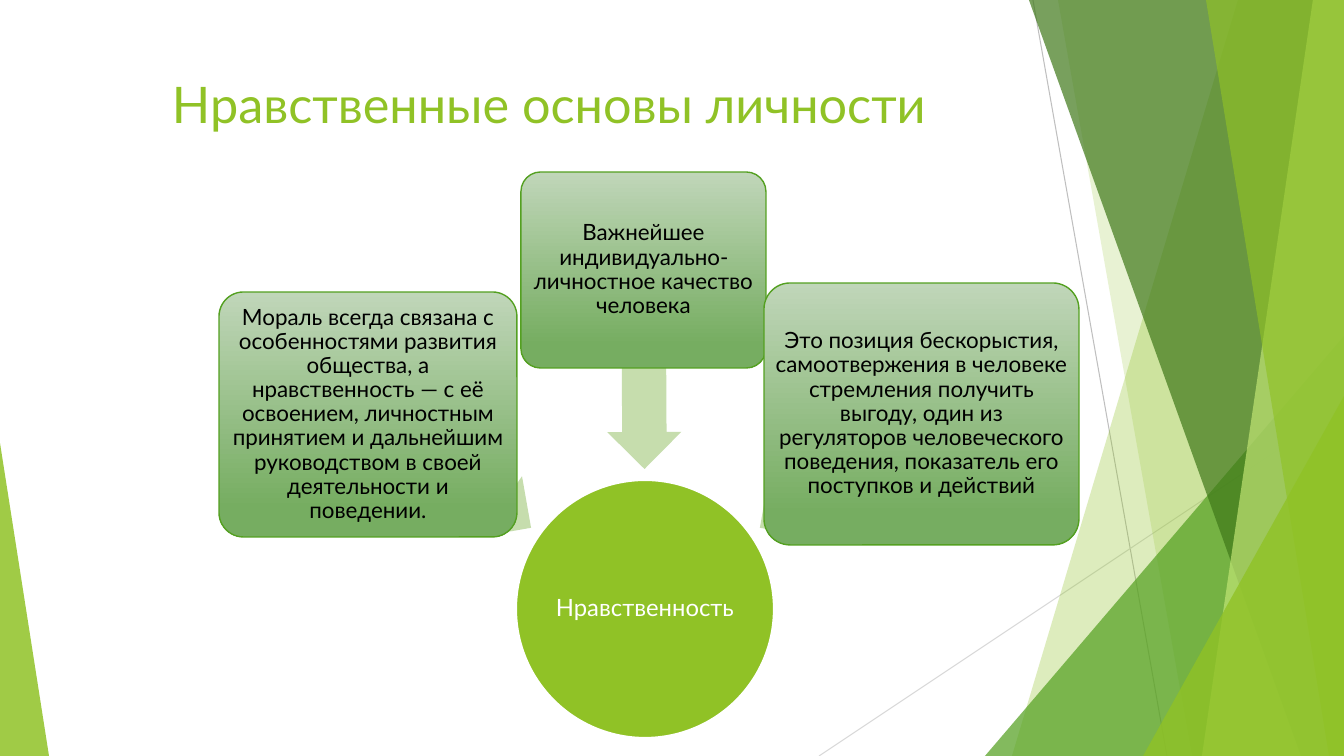
from pptx import Presentation
from pptx.dml.color import RGBColor
from pptx.enum.shapes import MSO_CONNECTOR, MSO_SHAPE
from pptx.enum.text import MSO_ANCHOR, PP_ALIGN
from pptx.oxml.ns import qn
from pptx.util import Pt
from lxml import etree

TRIANGLE = MSO_SHAPE.ISOSCELES_TRIANGLE
ROUNDED = MSO_SHAPE.ROUNDED_RECTANGLE
ARROW = MSO_SHAPE.LEFT_ARROW
OVAL = MSO_SHAPE.OVAL
STRAIGHT = MSO_CONNECTOR.STRAIGHT
TOP, MIDDLE = MSO_ANCHOR.TOP, MSO_ANCHOR.MIDDLE
CENTER = PP_ALIGN.CENTER

WIDTH, HEIGHT = 1344, 756
PX = 12192000 / WIDTH  # EMU in one px
GREEN = "90C226"


def paint(fill, color, opacity=100):
    fill.solid()
    fill.fore_color.rgb = RGBColor.from_string(color)
    if opacity < 100:
        tint = fill._xPr.find(qn("a:solidFill"))[0]
        etree.SubElement(tint, qn("a:alpha"), val=str(opacity * 1000))


def write(shape, text, size, color, anchor=MIDDLE, inset=3, spacing=0.9):
    frame = shape.text_frame
    frame.word_wrap = True
    frame.vertical_anchor = anchor
    frame.margin_left = frame.margin_right = round(inset * PX)
    frame.margin_top = frame.margin_bottom = round(inset * PX)
    para = frame.paragraphs[0]
    para.alignment = CENTER
    para.line_spacing = spacing
    span = para.add_run()
    span.text = text
    span.font.size = Pt(size)
    span.font.name = "Lato"
    paint(span.font.fill, color)


deck = Presentation()
deck.slide_width, deck.slide_height = round(WIDTH * PX), round(HEIGHT * PX)
page = deck.slides.add_slide(deck.slide_layouts[5])
shapes = page.shapes

# Thin lines behind the wedges
for ends, color in [((1033, 0, 1167, 756), "BFBFBF"),
                    ((1344, 406, 819, 756), "D9D9D9")]:
    line = shapes.add_connector(STRAIGHT, *[round(end * PX) for end in ends])
    paint(line.line.fill, color)
    line.line.width = Pt(0.75)
    etree.SubElement(line._element.spPr, qn("a:effectLst"))

# Decoration: wedges (top x, bottom x) reach the right edge, triangles have (box, adjustment)
decoration = [
    ("wedge", (1238, 1012), GREEN, 30),
    ("wedge", (1058, 1192), GREEN, 20),
    ("triangle", ((985, 336, 359, 420), 1), "54A021", 72),
    ("wedge", (1029, 1301), "3F7819", 70),
    ("wedge", (1313, 1202), "C0E474", 70),
    ("wedge", (1206, 1329), GREEN, 65),
    ("triangle", ((1143, 396, 201, 360), 1), GREEN, 80),
    ("triangle", ((0, 443, 49, 313), 0), GREEN, 85),
]
for kind, geometry, color, opacity in decoration:
    if kind == "wedge":
        top, bottom = geometry
        outline = shapes.build_freeform(top, 0, PX)
        outline.add_line_segments([(WIDTH, 0), (WIDTH, HEIGHT), (bottom, HEIGHT)])
        facet = outline.convert_to_shape()
    else:
        box, apex = geometry
        facet = shapes.add_shape(TRIANGLE, *[round(side * PX) for side in box])
        facet.adjustments[0] = apex
    facet.shadow.inherit = False
    paint(facet.fill, color, opacity)
    facet.line.fill.background()

# Title
title = shapes.title
title.left, title.top, title.width, title.height = [
    round(side * PX) for side in (75, 68, 948, 145)]
write(title, "Нравственные основы личности", 36, GREEN, anchor=TOP, inset=5, spacing=1)

# Central circle
circle = shapes.add_shape(OVAL, *[round(side * PX) for side in (516, 480, 258, 258)])
circle.shadow.inherit = False
paint(circle.fill, GREEN)
paint(circle.line.fill, "FFFFFF")
circle.line.width = Pt(1.5)
write(circle, "Нравственность", 17, "FFFFFF", inset=1)

# Three statements, each with an arrow towards the circle
statements = [
    ((351, 434), 215, (219, 292, 298, 245),
     "Мораль всегда связана с особенностями развития общества, а нравственность — "
     "с её освоением, личностным принятием и дальнейшим руководством в своей "
     "деятельности и поведении."),
    ((545, 333), 269.7, (521, 172, 245, 196),
     "Важнейшее индивидуально-личностное качество человека"),
    ((742, 434), 325, (764, 283, 315, 262),
     "Это позиция бескорыстия, самоотвержения в человеке стремления получить выгоду, "
     "один из регуляторов человеческого поведения, показатель его поступков и действий"),
]
for corner, angle, box, text in statements:
    arrow = shapes.add_shape(ARROW, *[round(side * PX) for side in (*corner, 198, 74)])
    arrow.shadow.inherit = False
    arrow.rotation = angle
    arrow.adjustments[0], arrow.adjustments[1] = 0.6, 0.5
    paint(arrow.fill, "C6DDAD")
    arrow.line.fill.background()

    card = shapes.add_shape(ROUNDED, *[round(side * PX) for side in box])
    card.shadow.inherit = False
    card.adjustments[0] = 0.1
    card.fill.gradient()
    card.fill.gradient_angle = 270
    for stop, position, color in zip(card.fill.gradient_stops, (0, 0.88), ("C0D6B9", "76AD61")):
        stop.position = position
        stop.color.rgb = RGBColor.from_string(color)
    paint(card.line.fill, "54A021")
    card.line.width = Pt(1)
    write(card, text, 16, "000000")

deck.save("out.pptx")
